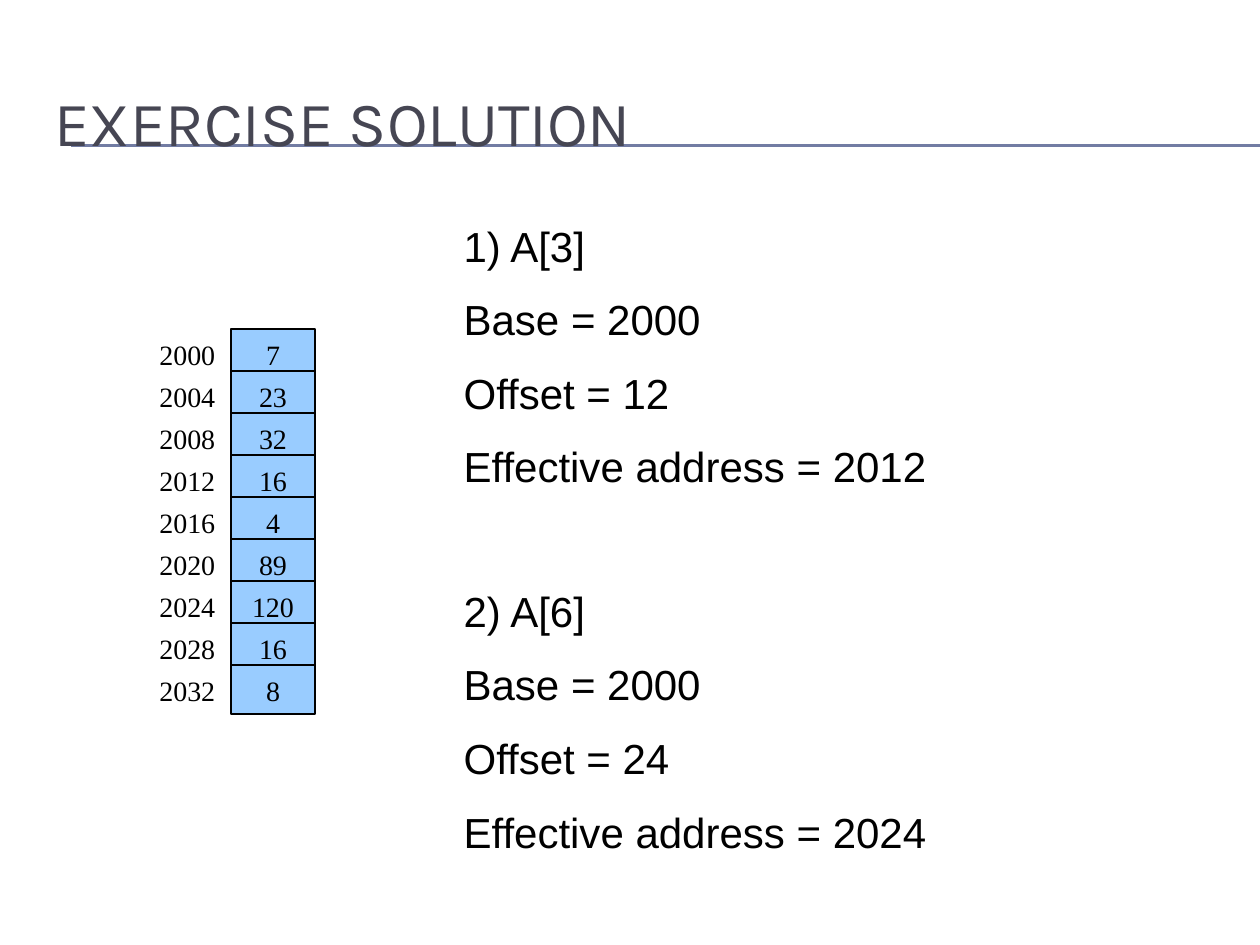
from dataclasses import dataclass

from lxml import etree
from pptx import Presentation
from pptx import util as u
from pptx.dml.color import RGBColor
from pptx.enum import shapes, text
from pptx.oxml.ns import qn

PX_PER_INCH = 126


def px(length):
    return u.Emu(round(length * u.Inches(1) / PX_PER_INCH))


@dataclass(frozen=True)
class Theme:
    ink: str = "000000"
    heading: str = "464653"
    rule: str = "727CA3"
    cell: str = "99CCFF"
    heading_font: str = "Karla"
    body_font: str = "Arial"
    memory_font: str = "Times New Roman"
    heading_size: int = 36
    body_size: int = 24
    memory_size: int = 16


class Deck:
    def __init__(self, theme):
        self.theme = theme
        self.presentation = Presentation()
        self.presentation.slide_width = px(1260)
        self.presentation.slide_height = px(945)
        self.slide = self.presentation.slides.add_slide(self.presentation.slide_layouts[1])

    def place(self, part, box):
        for name, length in zip(("left", "top", "width", "height"), box):
            setattr(part, name, px(length))

    def style(self, target, values):
        for name, value in values.items():
            setattr(target, name, value)

    def add_words(self, paragraph, words, font, size, color, align=text.PP_ALIGN.LEFT):
        run = paragraph.add_run()
        run.text = words
        self.style(run.font, {"name": font, "size": u.Pt(size), "bold": False})
        run.font.color.rgb = RGBColor.from_string(color)
        paragraph.alignment = align

    def rule(self, left, right, y):
        line = self.slide.shapes.add_connector(
            shapes.MSO_CONNECTOR.STRAIGHT, px(left), px(y), px(right), px(y))
        line.line.color.rgb = RGBColor.from_string(self.theme.rule)
        line.line.width = u.Pt(0.75)
        etree.SubElement(line._element.spPr, qn("a:effectLst"))
        self.slide.shapes._spTree.insert(2, line._element)

    def title(self, words, box):
        heading = self.slide.shapes.title
        self.place(heading, box)
        self.style(heading.text_frame, {
            "vertical_anchor": text.MSO_ANCHOR.MIDDLE,
            "auto_size": text.MSO_AUTO_SIZE.NONE, "word_wrap": True})
        self.add_words(heading.text_frame.paragraphs[0], words, self.theme.heading_font,
                       self.theme.heading_size, self.theme.heading)

    def body(self, groups, box, gap, group_gap):
        answers = self.slide.placeholders[1]
        self.place(answers, box)
        frame = answers.text_frame
        self.style(frame, {"auto_size": text.MSO_AUTO_SIZE.NONE,
                           "word_wrap": True, "margin_top": px(10)})
        for group_index, group in enumerate(groups):
            for line_index, words in enumerate(group):
                first = group_index == line_index == 0
                paragraph = frame.paragraphs[0] if first else frame.add_paragraph()
                before = 0 if first else gap if line_index else group_gap
                paragraph.space_before = u.Pt(before)
                properties = paragraph._p.get_or_add_pPr()
                properties.set("marL", "0")
                properties.set("indent", "0")
                etree.SubElement(properties, qn("a:buNone"))
                self.add_words(paragraph, words, self.theme.body_font,
                               self.theme.body_size, self.theme.ink)

    def memory_text(self, part, words, align):
        self.style(part.text_frame, {
            "word_wrap": True, "margin_top": px(9),
            "vertical_anchor": text.MSO_ANCHOR.TOP})
        self.add_words(part.text_frame.paragraphs[0], words, self.theme.memory_font,
                       self.theme.memory_size, self.theme.ink, align)

    def address(self, words, box):
        label = self.slide.shapes.add_textbox(*map(px, box))
        self.memory_text(label, words, text.PP_ALIGN.LEFT)

    def cell(self, words, box):
        cell = self.slide.shapes.add_shape(shapes.MSO_SHAPE.RECTANGLE, *map(px, box))
        cell.shadow.inherit = False
        cell.fill.solid()
        cell.fill.fore_color.rgb = RGBColor.from_string(self.theme.cell)
        cell.line.color.rgb = RGBColor.from_string(self.theme.ink)
        cell.line.width = u.Pt(1.25)
        self.memory_text(cell, words, text.PP_ALIGN.CENTER)


def solution(name, offset, base=2000):
    return [name, f"Base = {base}", f"Offset = {offset}",
            f"Effective address = {base + offset}"]


def main():
    deck = Deck(Theme())
    for y in (145, 146):
        deck.rule(71, 1260, y)
    deck.title("EXERCISE SOLUTION", (42, 63, 1197, 116))
    deck.body([solution("1) A[3]", 12), solution("2) A[6]", 24)],
              (451, 210, 651, 667), gap=13.2, group_gap=54)
    for index, value in enumerate((7, 23, 32, 16, 4, 89, 120, 16, 8)):
        top = 329 + 42 * index
        deck.address(str(2000 + 4 * index), (147, top, 84, 47))
        deck.cell(str(value), (231, top, 84, 49))
    deck.presentation.save("out.pptx")


if __name__ == "__main__":
    main()
